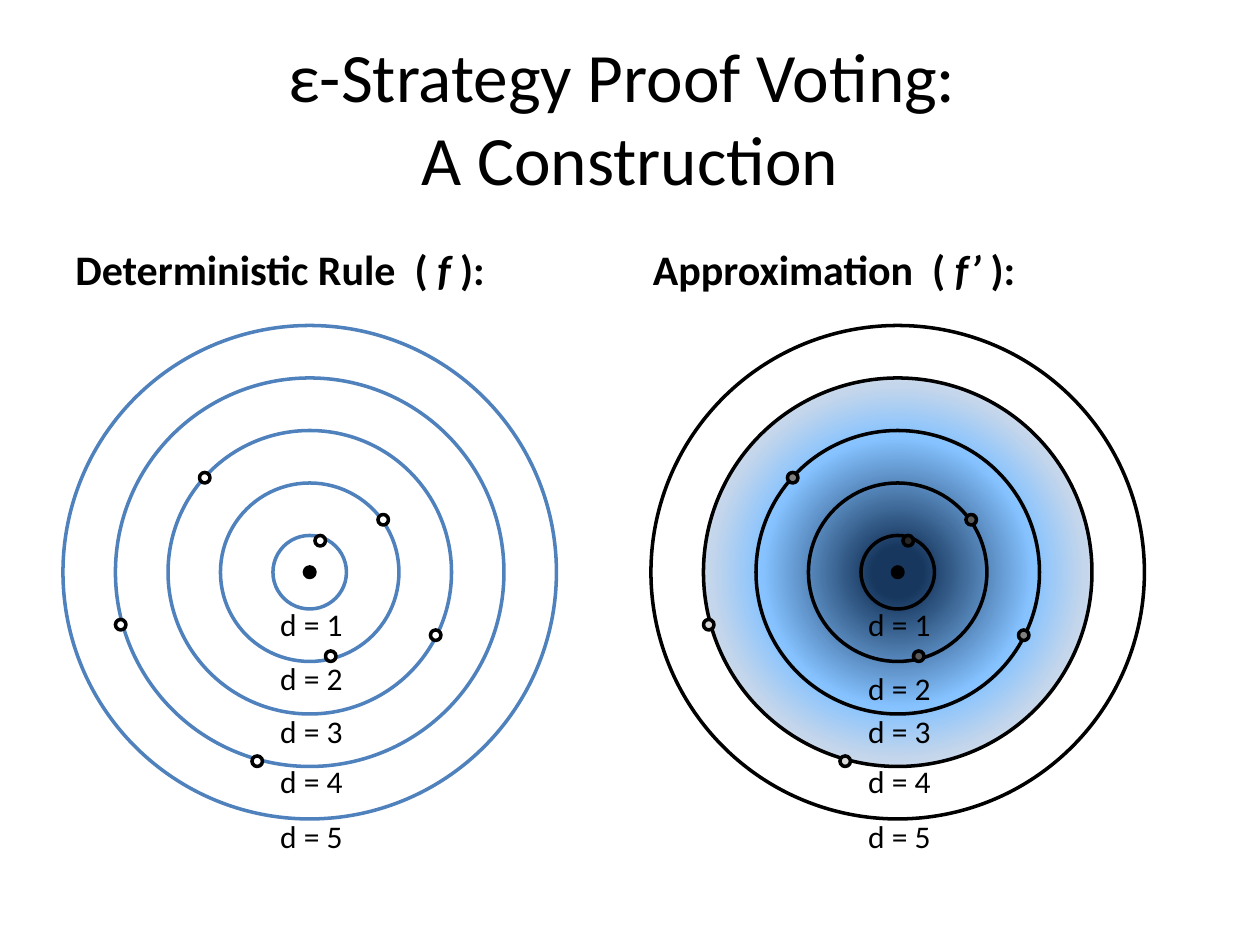
from dataclasses import dataclass
from typing import Optional

import pptx
import pptx.dml.color
import pptx.enum.shapes
import pptx.enum.text
import pptx.oxml
import pptx.oxml.ns
import pptx.util
from pptx.enum.text import MSO_ANCHOR, PP_ALIGN

PX = 7620  # EMU per px, 120 px to the inch


@dataclass(frozen=True)
class Theme:
    font: str = "Calibri"
    title_size: float = 39.6
    heading_size: int = 24
    label_size: int = 18
    line_width: int = 2
    black: str = "000000"
    white: str = "FFFFFF"
    blue: str = "4F81BD"
    near: str = "262626"
    shades: tuple = ("595959", "808080", "D9D9D9")
    glow: tuple = ((9, "17375E"), (49, "85C2FF"), (68, "C4D6EB"), (87, "FFEBFA"))


THEME = Theme()


@dataclass(frozen=True)
class Dot:
    dx: int
    dy: int
    shade: str


@dataclass(frozen=True)
class Panel:
    heading: tuple[str, str, str]  # plain, italic, plain
    heading_x: int
    cx: int
    line: str
    shaded: bool
    label_tops: tuple[int, ...]


CY = 545
RING_DIAMETERS = (470, 370, 270, 170, 70)
GLOW_DIAMETER = 370
DOT_SIZE = 10
DOTS = (
    Dot(10, -30, THEME.near),
    Dot(70, -50, THEME.shades[0]),
    Dot(120, 60, THEME.shades[1]),
    Dot(20, 80, THEME.shades[0]),
    Dot(-180, 50, THEME.shades[2]),
    Dot(-100, -90, THEME.shades[1]),
    Dot(-50, 180, THEME.shades[2]),
)
PANELS = (
    Panel(("Deterministic Rule  ( ", "f ", "):"), 60, 295, THEME.blue, False,
          (570, 622, 672, 720, 772)),
    Panel(("Approximation  ( ", "f’ ", "):"), 610, 855, THEME.black, True,
          (570, 631, 672, 720, 772)),
)


def rgb(value: str) -> pptx.dml.color.RGBColor:
    return pptx.dml.color.RGBColor.from_string(value)


def add_text(shapes, x: int, y: int, w: int, h: int, size: float, anchor=MSO_ANCHOR.TOP):
    """Add an empty text box and return its text frame, with the font set."""
    tf = shapes.add_textbox(x * PX, y * PX, w * PX, h * PX).text_frame
    tf.word_wrap = True
    tf.vertical_anchor = anchor
    font = tf.paragraphs[0].font
    font.name = THEME.font
    font.size = pptx.util.Pt(size)
    font.color.rgb = rgb(THEME.black)
    return tf


def add_circle(shapes, cx: int, cy: int, d: int, line: str, fill: Optional[str]):
    """Add a circle by its centre; without a fill colour it is hollow."""
    sp = shapes.add_shape(pptx.enum.shapes.MSO_SHAPE.OVAL,
                          (cx - d // 2) * PX, (cy - d // 2) * PX, d * PX, d * PX)
    sp.shadow.inherit = False
    sp.line.color.rgb = rgb(line)
    sp.line.width = pptx.util.Pt(THEME.line_width)
    if fill is None:
        sp.fill.background()
    else:
        sp.fill.solid()
        sp.fill.fore_color.rgb = rgb(fill)
    return sp


def set_glow(sp) -> None:
    """Replace a solid fill by a radial gradient."""
    stops = "".join(f'<a:gs pos="{pos * 1000}"><a:srgbClr val="{color}"/></a:gs>'
                    for pos, color in THEME.glow)
    grad = pptx.oxml.parse_xml(
        f'<a:gradFill {pptx.oxml.ns.nsdecls("a")} rotWithShape="1"><a:gsLst>{stops}</a:gsLst>'
        '<a:path path="circle"><a:fillToRect l="50000" t="50000" r="50000" b="50000"/>'
        '</a:path></a:gradFill>')
    spPr = sp.fill._xPr
    spPr.replace(spPr.find(pptx.oxml.ns.qn("a:solidFill")), grad)


def add_heading(shapes, panel: Panel) -> None:
    tf = add_text(shapes, panel.heading_x, 202, 530, 84, THEME.heading_size, MSO_ANCHOR.BOTTOM)
    p = tf.paragraphs[0]
    p.font.bold = True
    for text, italic in zip(panel.heading, (False, True, False)):
        r = p.add_run()
        r.text = text
        r.font.italic = italic


def add_rings(shapes, panel: Panel) -> None:
    """Draw the rings, their dots and their distance labels as one group."""
    group = shapes.add_group_shape().shapes
    for d in RING_DIAMETERS:
        hollow = panel.shaded and d < GLOW_DIAMETER
        sp = add_circle(group, panel.cx, CY, d, panel.line, None if hollow else THEME.white)
        if panel.shaded and d == GLOW_DIAMETER:
            set_glow(sp)
    add_circle(group, panel.cx, CY, DOT_SIZE, THEME.black, THEME.black)
    for dot in DOTS:
        add_circle(group, panel.cx + dot.dx, CY + dot.dy, DOT_SIZE, THEME.black,
                   dot.shade if panel.shaded else THEME.white)
    for distance, top in enumerate(panel.label_tops, 1):
        tf = add_text(group, panel.cx - 40, top, 85, 48, THEME.label_size)
        tf.word_wrap = False
        tf.auto_size = pptx.enum.text.MSO_AUTO_SIZE.SHAPE_TO_FIT_TEXT
        tf.paragraphs[0].add_run().text = f"d = {distance}"


def main() -> None:
    prs = pptx.Presentation()
    prs.slide_width, prs.slide_height = 1200 * PX, 900 * PX
    shapes = prs.slides.add_slide(prs.slide_layouts[6]).shapes
    tf = add_text(shapes, 60, 36, 1080, 150, THEME.title_size, MSO_ANCHOR.MIDDLE)
    p = tf.paragraphs[0]
    p.alignment = PP_ALIGN.CENTER
    for i, text in enumerate(("ε-Strategy Proof Voting: ", "A Construction")):
        if i:
            p.add_line_break()
        p.add_run().text = text
    for panel in PANELS:
        add_heading(shapes, panel)
        add_rings(shapes, panel)
    prs.save("out.pptx")


if __name__ == "__main__":
    main()
